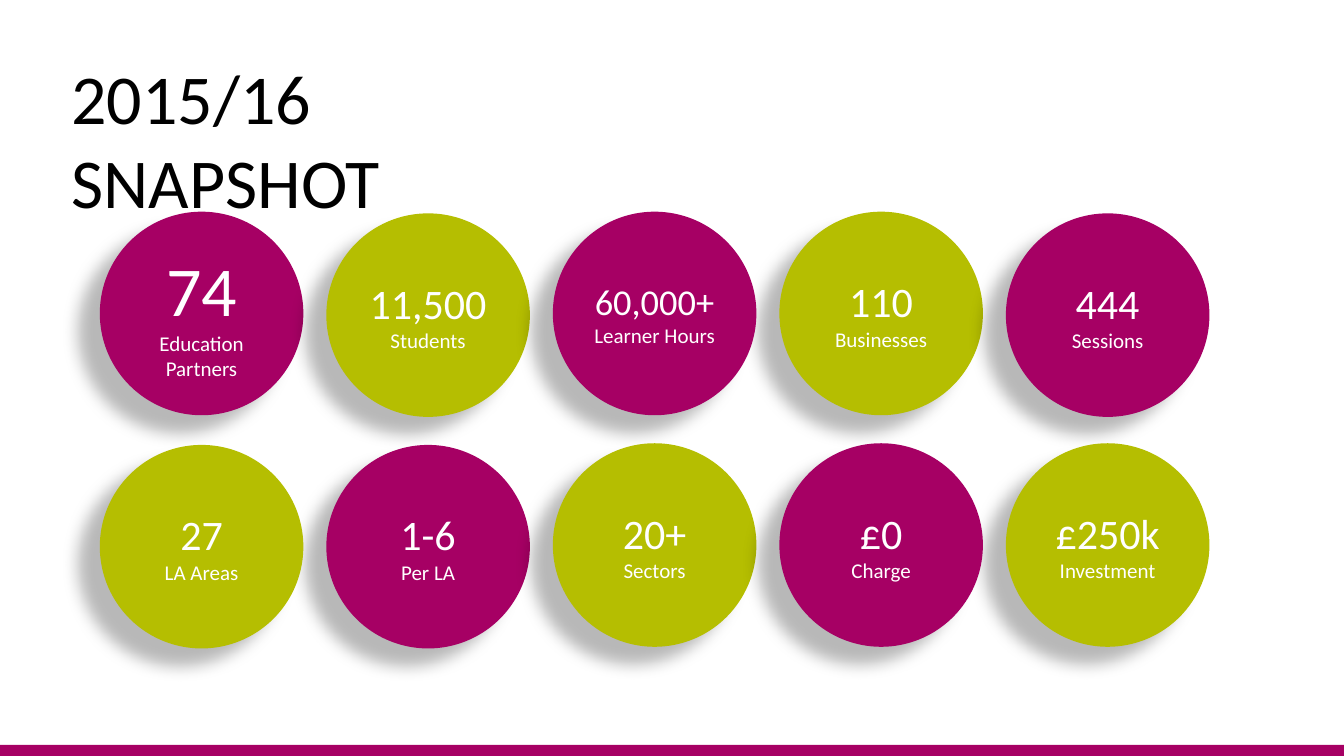
from lxml import etree
from pptx import Presentation
from pptx import util as u
from pptx.dml.color import RGBColor
from pptx.enum import shapes, text
from pptx.oxml import ns

MAGENTA = RGBColor(0xA6, 0x00, 0x64)
LIME = RGBColor(0xB5, 0xBE, 0x01)
WHITE = RGBColor(0xFF, 0xFF, 0xFF)
BLACK = RGBColor(0x00, 0x00, 0x00)

SHADOW = (
    f'<a:outerShdw {ns.nsdecls("a")} blurRad="{u.Pt(11.8)}" dist="{u.Pt(19.7)}" '
    f'dir="{141 * 60000}" algn="ctr" rotWithShape="0">'
    '<a:srgbClr val="000000"><a:alpha val="28000"/></a:srgbClr></a:outerShdw>'
)


def write(paragraph, words, size, color, align):
    paragraph.text = words
    paragraph.alignment = align
    for run in paragraph.runs:
        run.font.name = "Calibri"
        run.font.size = u.Pt(size)
        run.font.color.rgb = color


deck = Presentation()
deck.slide_width = u.Pt(960)
deck.slide_height = u.Pt(540)
snapshot = deck.slides.add_slide(deck.slide_layouts[5])

heading = snapshot.shapes.title
heading.left, heading.top = u.Pt(43.9), u.Pt(35.3)
heading.width, heading.height = u.Pt(417), u.Pt(67.7)
heading.text_frame.auto_size = text.MSO_AUTO_SIZE.NONE
heading.text_frame.word_wrap = True
heading.text_frame.vertical_anchor = text.MSO_ANCHOR.TOP
heading.text_frame.margin_right = u.Pt(40)
write(heading.text_frame.paragraphs[0], "2015/16 SNAPSHOT",
      size=50, color=BLACK, align=text.PP_ALIGN.LEFT)

DIAMETER = 145.4
FIRST_LEFT, COLUMN_STEP = 71.3, 161.8
ROW_TOPS = (151.2, 316.6)
LOWERED = {(0, 1), (0, 4), (1, 0), (1, 1)}

figures = [
    (0, 0, "74", 50, "Education\vPartners"),
    (0, 1, "11,500", 30, "Students"),
    (0, 3, "110", 30, "Businesses"),
    (0, 4, "444", 30, "Sessions"),
    (1, 4, "£250k", 30, "Investment"),
    (0, 2, "60,000+", 26, "Learner Hours"),
    (1, 1, "1-6", 30, "Per LA"),
    (1, 2, "20+", 30, "Sectors"),
    (1, 3, "£0", 30, "Charge"),
    (1, 0, "27", 30, "LA Areas"),
]

for row, column, amount, amount_size, label in figures:
    top = ROW_TOPS[row] + (1.2 if (row, column) in LOWERED else 0)
    circle = snapshot.shapes.add_shape(
        shapes.MSO_SHAPE.OVAL, u.Pt(FIRST_LEFT + column * COLUMN_STEP), u.Pt(top),
        u.Pt(DIAMETER), u.Pt(DIAMETER))
    circle.fill.solid()
    circle.fill.fore_color.rgb = LIME if (row + column) % 2 else MAGENTA
    circle.line.fill.background()
    circle.shadow.inherit = False
    effects = circle._element.spPr.find(ns.qn("a:effectLst"))
    effects.append(etree.fromstring(SHADOW))
    frame = circle.text_frame
    frame.word_wrap = True
    frame.vertical_anchor = text.MSO_ANCHOR.MIDDLE
    write(frame.paragraphs[0], amount,
          size=amount_size, color=WHITE, align=text.PP_ALIGN.CENTER)
    write(frame.add_paragraph(), label,
          size=15, color=WHITE, align=text.PP_ALIGN.CENTER)

footer = snapshot.shapes.add_shape(
    shapes.MSO_SHAPE.RECTANGLE, u.Pt(0), u.Pt(532), u.Pt(960), u.Pt(8))
footer.fill.solid()
footer.fill.fore_color.rgb = MAGENTA
footer.line.fill.background()
footer.shadow.inherit = False

deck.save("out.pptx")
